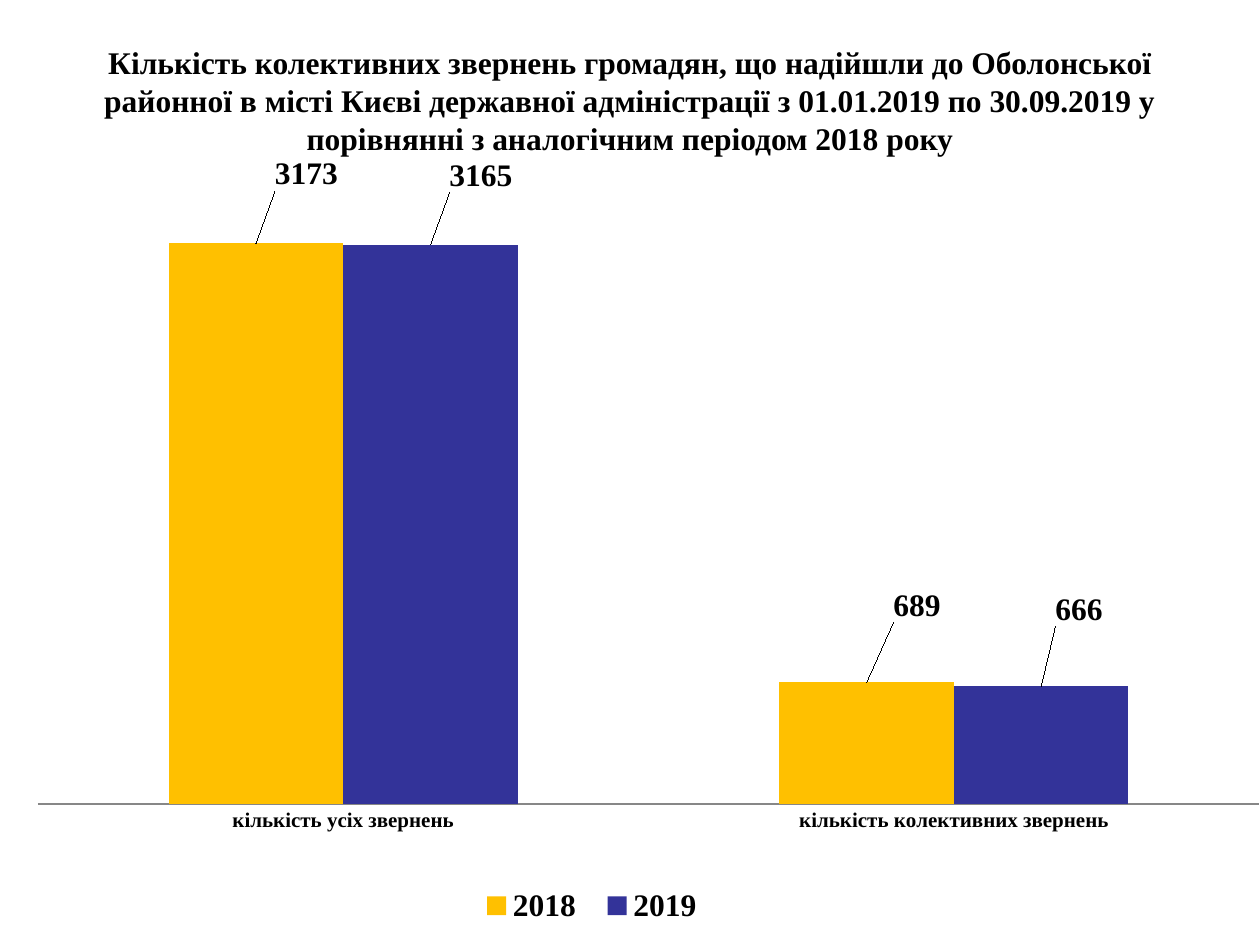
"""Build a slide comparing all and collective appeals in 2018 and 2019."""
from pptx import Presentation
from pptx import util as u
from pptx.chart.data import CategoryChartData
from pptx.dml.color import RGBColor
from pptx.enum import chart as c, text as t
from pptx.oxml import parse_xml
from pptx.oxml.ns import nsdecls, qn

TITLE = (
    "Кількість колективних звернень громадян, що надійшли до Оболонської "
    "районної в місті Києві державної адміністрації з 01.01.2019 по 30.09.2019 у "
    "порівнянні з аналогічним періодом 2018 року"
)
CATEGORIES = ["кількість усіх звернень", "кількість колективних звернень"]
SERIES = {"2018": (3173, 689), "2019": (3165, 666)}
COLORS = {"text": "000000", "axis": "878787", "2018": "FFC000", "2019": "333399"}
LABEL_SHIFTS = [(0.04, -0.06), (0.04, -0.07), (0.04, -0.06), (0.03, -0.07)]
PLOT_BOX = (0.03, 0.03, 0.97, 0.79)
LEGEND_BOX = (0.37, 0.91, 0.2, 0.08)
AXIS_MAXIMUM = 3500
WIDTH, HEIGHT = u.Inches(10), u.Inches(7.5)


def style_font(font, size=18):
    font.name = "Times New Roman"
    font.size = u.Pt(size)
    font.bold = True
    font.color.rgb = RGBColor.from_string(COLORS["text"])


def make_layout(values, names="xywh", edge=False, inner=False):
    parts = '<c:layoutTarget val="inner"/>' if inner else ""
    if edge:
        parts += '<c:xMode val="edge"/><c:yMode val="edge"/>'
    parts += "".join(f'<c:{name} val="{value}"/>' for name, value in zip(names, values))
    return parse_xml(
        f'<c:layout {nsdecls("c")}><c:manualLayout>{parts}</c:manualLayout></c:layout>'
    )


def place(element, layout, after=None):
    for old in element.findall(qn("c:layout")):
        element.remove(old)
    if after is None:
        element.insert(0, layout)
    else:
        element.find(qn(after)).addnext(layout)


def add_title(slide):
    title = slide.shapes.title
    title.left, title.top = int(WIDTH * 0.05), u.Inches(0.17)
    title.width, title.height = int(WIDTH * 0.9), u.Inches(1.25)
    frame = title.text_frame
    frame.word_wrap = True
    frame.auto_size = t.MSO_AUTO_SIZE.NONE
    frame.vertical_anchor = t.MSO_ANCHOR.MIDDLE
    paragraph = frame.paragraphs[0]
    paragraph.alignment = t.PP_ALIGN.CENTER
    run = paragraph.add_run()
    run.text = TITLE
    style_font(run.font)


def add_appeals_chart(slide):
    data = CategoryChartData()
    data.categories = CATEGORIES
    for name, values in SERIES.items():
        data.add_series(name, values)
    top = HEIGHT // 6
    chart = slide.shapes.add_chart(
        c.XL_CHART_TYPE.COLUMN_CLUSTERED, 0, top, WIDTH, HEIGHT - top, data
    ).chart
    chart.has_title = False
    chart.font.name = "Arial"
    chart.font.size = u.Pt(18)

    category_axis, value_axis = chart.category_axis, chart.value_axis
    category_axis.major_tick_mark = c.XL_TICK_MARK.NONE
    category_axis.format.line.color.rgb = RGBColor.from_string(COLORS["axis"])
    style_font(category_axis.tick_labels.font, 12)
    value_axis.minimum_scale, value_axis.maximum_scale = 0, AXIS_MAXIMUM
    value_axis.has_major_gridlines = False
    value_axis.visible = False

    plot = chart.plots[0]
    plot.gap_width, plot.overlap = 150, 0
    plot.vary_by_categories = False
    for series in plot.series:
        series.format.fill.solid()
        series.format.fill.fore_color.rgb = RGBColor.from_string(COLORS[series.name])
        series.data_labels.show_value = True
        style_font(series.data_labels.font)
        for index in range(len(CATEGORIES)):
            label = series.points[index].data_label
            style_font(label.font)
            label.position = c.XL_LABEL_POSITION.OUTSIDE_END

    chart.has_legend = True
    chart.legend.position = c.XL_LEGEND_POSITION.TOP
    chart.legend.include_in_layout = False
    style_font(chart.legend.font)

    root = chart.element
    for label, shift in zip(root.iter(qn("c:dLbl")), LABEL_SHIFTS):
        place(label, make_layout(shift), "c:idx")
    place(next(root.iter(qn("c:plotArea"))), make_layout(PLOT_BOX, edge=True, inner=True))
    place(next(root.iter(qn("c:legend"))), make_layout(LEGEND_BOX, edge=True), "c:legendPos")


def main():
    presentation = Presentation()
    presentation.slide_width, presentation.slide_height = WIDTH, HEIGHT
    slide = presentation.slides.add_slide(presentation.slide_layouts[5])
    add_title(slide)
    add_appeals_chart(slide)
    presentation.save("out.pptx")


if __name__ == "__main__":
    main()
